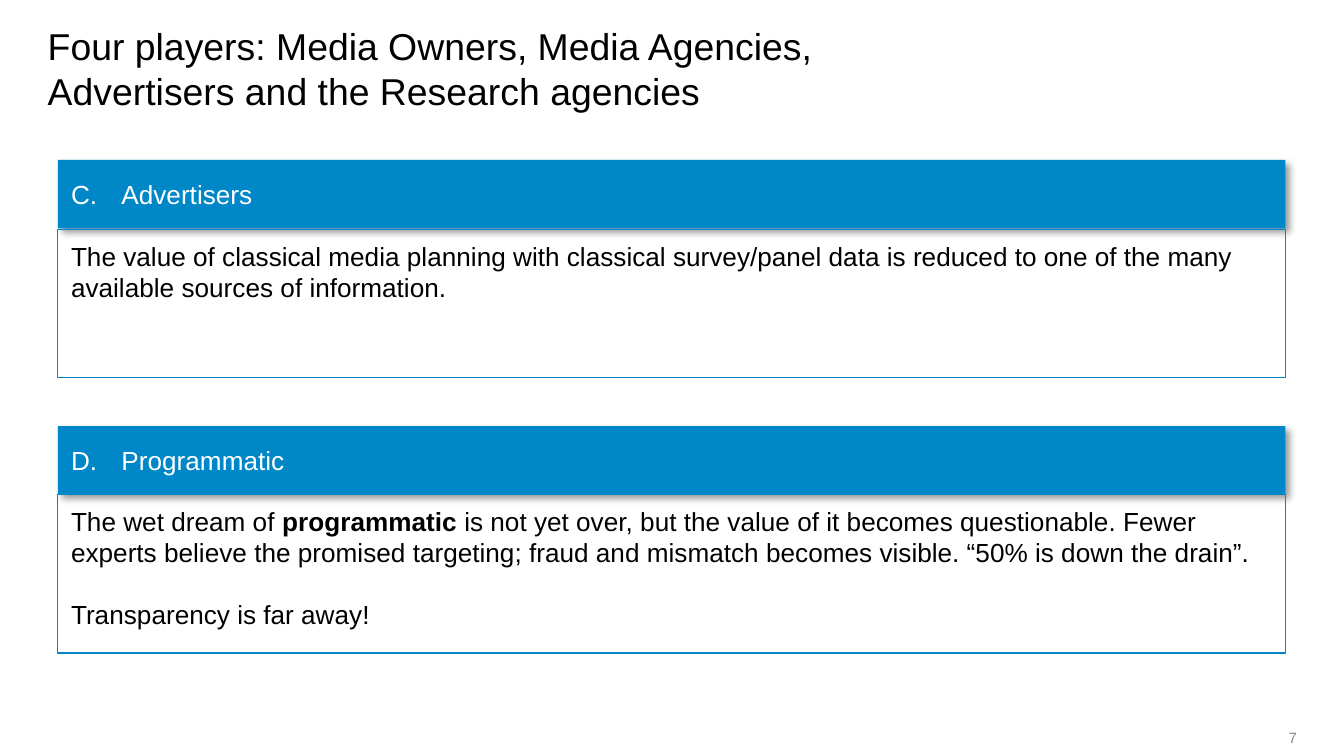
from dataclasses import dataclass

from lxml import etree
from pptx import Presentation
from pptx.dml.color import RGBColor
from pptx.enum.shapes import MSO_SHAPE
from pptx.enum.text import MSO_ANCHOR, PP_ALIGN
from pptx.oxml.ns import qn
from pptx.util import Inches, Pt

RECTANGLE = MSO_SHAPE.RECTANGLE
TOP, MIDDLE, BOTTOM = MSO_ANCHOR.TOP, MSO_ANCHOR.MIDDLE, MSO_ANCHOR.BOTTOM
LEFT, RIGHT = PP_ALIGN.LEFT, PP_ALIGN.RIGHT
TITLE_ONLY = 5
CELL = 0.1  # side of one grid cell, in inches


@dataclass(frozen=True)
class Theme:
    font: str = "Arial"
    accent: RGBColor = RGBColor(0x00, 0x87, 0xC8)
    ink: RGBColor = RGBColor(0x00, 0x00, 0x00)
    paper: RGBColor = RGBColor(0xFF, 0xFF, 0xFF)
    muted: RGBColor = RGBColor(0x92, 0x85, 0x80)
    title_size: int = 20
    body_size: int = 14
    number_size: int = 8


def cells(count):
    return Inches(round(count * CELL, 3))


class SlideBuilder:
    def __init__(self, deck, theme):
        self.theme = theme
        self.slide = deck.slides.add_slide(deck.slide_layouts[TITLE_ONLY])

    def style_font(self, para, size, color, align=LEFT):
        para.alignment = align
        para.font.name = self.theme.font
        para.font.size = Pt(size)
        para.font.color.rgb = color

    def set_frame(self, shape, anchor, insets=(0, 0, 0, 0)):
        """Insets are left, top, right, bottom, in grid cells."""
        frame = shape.text_frame
        frame.word_wrap = True
        frame.vertical_anchor = anchor
        (frame.margin_left, frame.margin_top,
         frame.margin_right, frame.margin_bottom) = map(cells, insets)
        return frame

    def title(self, text, column, row, columns, rows):
        box = self.slide.shapes.title
        box.left, box.top, box.width, box.height = map(cells, (column, row, columns, rows))
        frame = self.set_frame(box, BOTTOM)
        frame.text = text
        self.style_font(frame.paragraphs[0], self.theme.title_size, self.theme.ink)

    def rectangle(self, column, row, columns, rows):
        box = self.slide.shapes.add_shape(
            RECTANGLE, *map(cells, (column, row, columns, rows)))
        box.shadow.inherit = False
        return box

    def add_shadow(self, box):
        effects = box._element.spPr.find(qn("a:effectLst"))
        shadow = etree.SubElement(effects, qn("a:outerShdw"), blurRad=str(Pt(4)),
                                  dist=str(Pt(3)), dir="2700000", algn="tl", rotWithShape="0")
        color = etree.SubElement(shadow, qn("a:srgbClr"), val=str(self.theme.ink))
        etree.SubElement(color, qn("a:alpha"), val="40000")

    def heading(self, text, number, column, row, columns, rows):
        box = self.rectangle(column, row, columns, rows)
        box.fill.solid()
        box.fill.fore_color.rgb = self.theme.accent
        box.line.fill.background()
        self.add_shadow(box)
        para = self.set_frame(box, MIDDLE, (1, 0.8, 1, 0.8)).paragraphs[0]
        para.text = text
        indent = cells(3.75)
        properties = para._p.get_or_add_pPr()
        properties.set("marL", str(indent))
        properties.set("indent", str(-indent))
        etree.SubElement(properties, qn("a:buFont"), typeface="+mj-lt")
        etree.SubElement(properties, qn("a:buAutoNum"), type="alphaUcPeriod", startAt=str(number))
        self.style_font(para, self.theme.body_size, self.theme.paper)

    def body(self, paragraphs, column, row, columns, rows):
        """Each paragraph is a list of (text, bold) pairs."""
        box = self.rectangle(column, row, columns, rows)
        box.fill.background()
        box.line.color.rgb = self.theme.accent
        box.line.width = Pt(0.75)
        frame = self.set_frame(box, TOP, (1, 0.8, 1, 0.5))
        for index, spans in enumerate(paragraphs):
            para = frame.add_paragraph() if index else frame.paragraphs[0]
            self.style_font(para, self.theme.body_size, self.theme.ink)
            if index:
                para.space_before = Pt(16.5)
            for text, bold in spans:
                span = para.add_run()
                span.text = text
                if bold:
                    span.font.bold = True

    def page_number(self, number, column, row, columns, rows):
        box = self.slide.shapes.add_textbox(*map(cells, (column, row, columns, rows)))
        para = self.set_frame(box, MIDDLE).paragraphs[0]
        para.text = str(number)
        self.style_font(para, self.theme.number_size, self.theme.muted, RIGHT)


# heading, list number, heading row, body row, body rows, paragraphs
PANELS = [
    ("Advertisers", 3, 11.9, 17.1, 11, [
        [("The value of classical media planning with classical survey/panel data is "
          "reduced to one of the many available sources of information.", False)],
    ]),
    ("Programmatic", 4, 31.7, 36.8, 11.8, [
        [("The wet dream of ", False), ("programmatic", True),
         (" is not yet over, but the value of it becomes questionable. Fewer experts "
          "believe the promised targeting; fraud and mismatch becomes visible. "
          "“50% is down the drain”.", False)],
        [("Transparency is far away!", False)],
    ]),
]
PANEL_COLUMN, PANEL_COLUMNS, HEADING_ROWS = 4.3, 91.35, 5.1


def main():
    deck = Presentation()
    deck.slide_width, deck.slide_height = cells(100), cells(56.25)
    page = SlideBuilder(deck, Theme())
    page.title("Four players: Media Owners, Media Agencies, Advertisers and the "
               "Research agencies", 3.55, 2.1, 70.1, 6.3)
    for heading, number, heading_row, body_row, body_rows, paragraphs in PANELS:
        page.heading(heading, number, PANEL_COLUMN, heading_row, PANEL_COLUMNS, HEADING_ROWS)
        page.body(paragraphs, PANEL_COLUMN, body_row, PANEL_COLUMNS, body_rows)
    page.page_number(7, 82.3, 54.1, 14.2, 1.6)
    deck.save("out.pptx")


if __name__ == "__main__":
    main()
